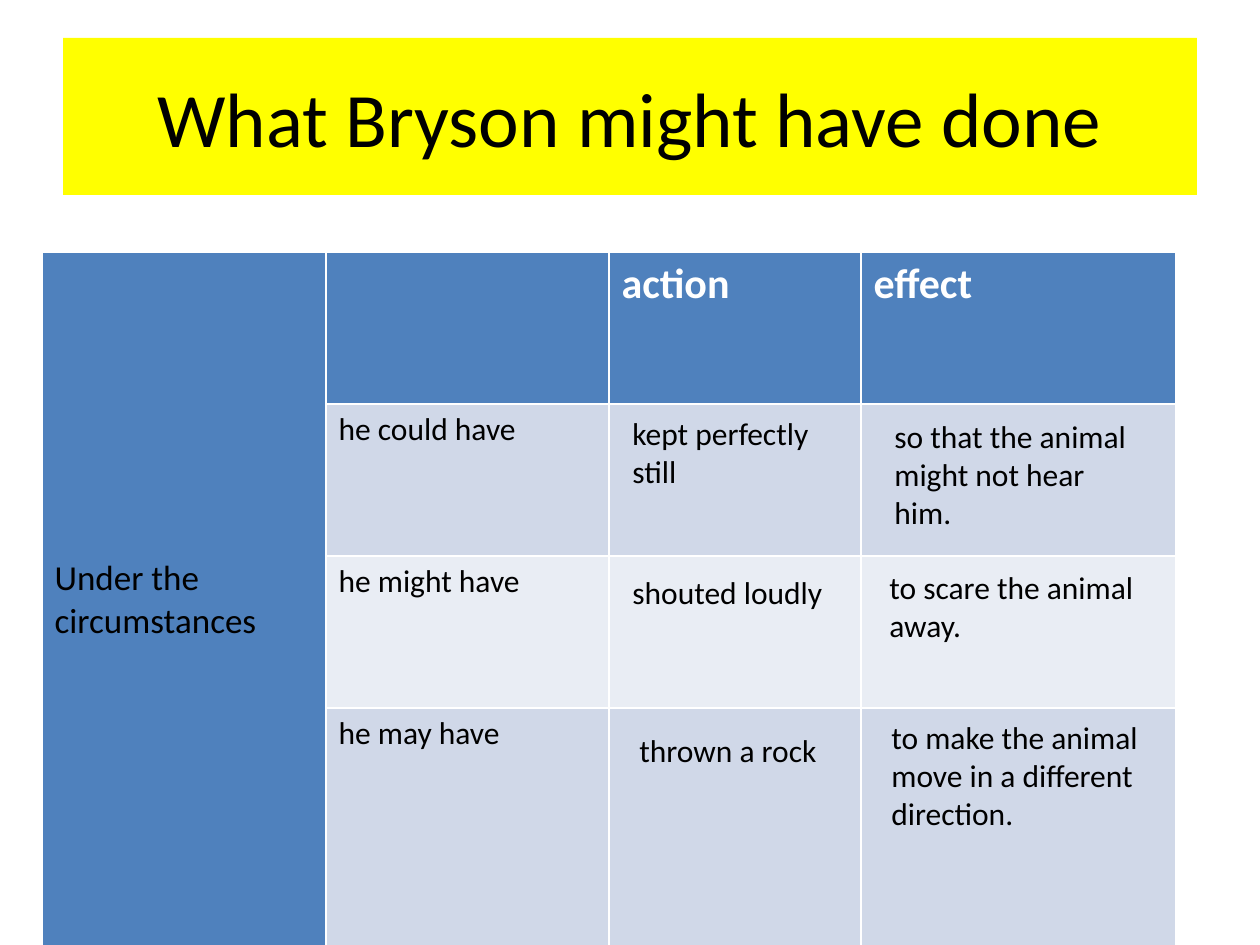
from pptx import Presentation
from pptx.dml.color import RGBColor
from pptx.enum.text import MSO_ANCHOR as ANCHOR, MSO_AUTO_SIZE as FIT, PP_ALIGN as ALIGN
from pptx.util import Emu, Pt

PX = 914400 / 126
BLUE, BAND, PALE = "4F81BD", "D0D8E8", "E9EDF4"
BODY = {"name": "Calibri", "size": Pt(18), "bold": False, "color": "000000"}
HEAD = {**BODY, "size": Pt(24), "bold": True, "color": "FFFFFF"}
SIDE = {**BODY, "size": Pt(20)}
TITLE = {**BODY, "size": Pt(44)}


def px(n):
    return Emu(round(n * PX))


def rgb(value):
    return RGBColor.from_string(value)


def paint(part, color):
    part.fill.solid()
    part.fill.fore_color.rgb = rgb(color)


def write(tf, text, fmt):
    p = tf.paragraphs[0]
    r = p.add_run()
    r.text = text
    for name, value in fmt.items():
        if name == "color":
            r.font.color.rgb = rgb(value)
        else:
            setattr(r.font, name, value)
    return p


def add_title(slide, box, text):
    sp = slide.shapes.title
    sp.left, sp.top, sp.width, sp.height = map(px, box)
    paint(sp, "FFFF00")
    sp.text_frame.vertical_anchor = ANCHOR.MIDDLE
    write(sp.text_frame, text, TITLE).alignment = ALIGN.CENTER


def add_grid(slide, box, col_widths, side, heads, labels):
    fills = [BLUE, BAND, PALE, BAND]
    table = slide.shapes.add_table(len(fills), len(col_widths), *map(px, box)).table
    for col, width in zip(table.columns, col_widths):
        col.width = px(width)
    for r, fill in enumerate(fills):
        table.rows[r].height = px(box[3] // len(fills))
        for c in range(len(col_widths)):
            paint(table.cell(r, c), BLUE if c == 0 else fill)

    # Side label spans every row and sits below the middle
    cell = table.cell(0, 0)
    cell.merge(table.cell(len(fills) - 1, 0))
    cell.margin_top = px(305)
    write(cell.text_frame, side, SIDE)

    # Column heads and row labels
    for c, text in enumerate(heads, 2):
        write(table.cell(0, c).text_frame, text, HEAD)
    for r, text in enumerate(labels, 1):
        write(table.cell(r, 1).text_frame, text, BODY)


def add_answers(slide, origin, answers):
    left, top = origin
    for x, y, w, h, text in answers:
        box = slide.shapes.add_textbox(px(left + x), px(top + y), px(w), px(h))
        tf = box.text_frame
        tf.word_wrap = True
        tf.auto_size = FIT.SHAPE_TO_FIT_TEXT
        write(tf, text, BODY)


def main():
    prs = Presentation()
    prs.slide_width, prs.slide_height = px(1260), px(945)
    slide = prs.slides.add_slide(prs.slide_layouts[5])

    add_title(slide, (63, 38, 1134, 157), "What Bryson might have done")
    add_grid(slide, (42, 252, 1134, 608), (284, 283, 252, 315),
             "Under the circumstances", ["action", "effect"],
             ["he could have", "he might have", "he may have"])

    # Answers laid over the action column, then the effect column
    add_answers(slide, (609, 404), [
        (11, 4, 220, 89, "kept perfectly still"),
        (11, 163, 220, 53, "shouted loudly"),
        (18, 321, 210, 50, "thrown a rock"),
    ])
    add_answers(slide, (861, 404), [
        (21, 7, 273, 127, "so that the animal might not hear him."),
        (16, 158, 284, 89, "to scare the animal away."),
        (18, 308, 278, 127, "to make the animal move in a different direction."),
    ])
    prs.save("out.pptx")


if __name__ == "__main__":
    main()
